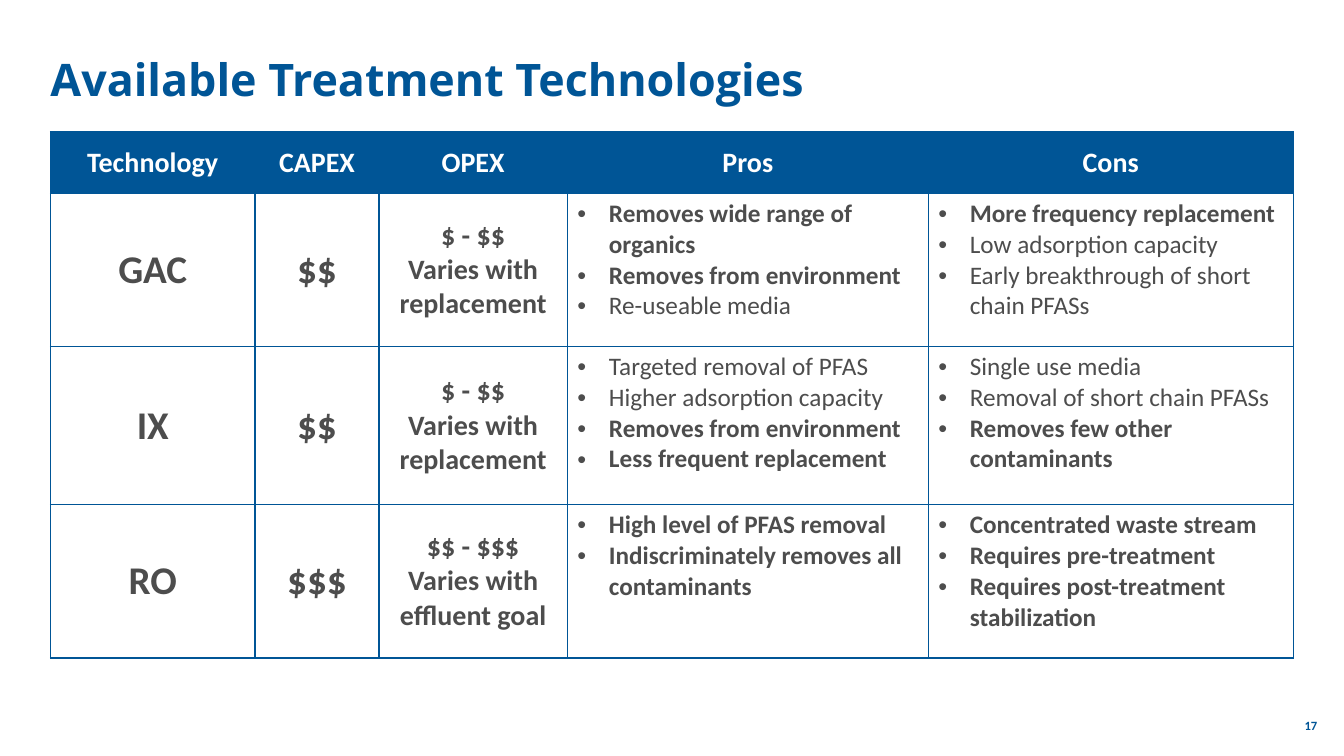
from lxml import etree
from pptx import Presentation
from pptx.dml.color import RGBColor
from pptx.enum import text
from pptx.oxml import ns
from pptx.util import Pt

BLUE, GREY, WHITE = "005596", "4D4D4D", "FFFFFF"
COL_WIDTHS = [146.2, 88.5, 134.6, 257.8, 260.7]
ROW_HEIGHTS = [43.9, 109.4, 113, 109.4]
HEADERS = ["Technology", "CAPEX", "OPEX", "Pros", "Cons"]
TECHNOLOGIES = [
    ("GAC", "$$", ["$ - $$", "Varies with", "replacement"],
     [("Removes wide range of organics", True),
      ("Removes from environment", True),
      ("Re-useable media", False)],
     [("More frequency replacement", True),
      ("Low adsorption capacity", False),
      ("Early breakthrough of short chain PFASs", False)]),
    ("IX", "$$", ["$ - $$", "Varies with", "replacement"],
     [("Targeted removal of PFAS", False),
      ("Higher adsorption capacity", False),
      ("Removes from environment", True),
      ("Less frequent replacement", True)],
     [("Single use media", False),
      ("Removal of short chain PFASs", False),
      ("Removes few other contaminants", True)]),
    ("RO", "$$$", ["$$ - $$$", "Varies with effluent goal"],
     [("High level of PFAS removal", True),
      ("Indiscriminately removes all contaminants", True)],
     [("Concentrated waste stream", True),
      ("Requires pre-treatment", True),
      ("Requires post-treatment stabilization", True)]),
]


def rgb(color):
    return RGBColor.from_string(color)


def format_runs(p, size, color, bold=True, name="Calibri"):
    for r in p.runs:
        r.font.size = Pt(size)
        r.font.name = name
        r.font.bold = bold
        r.font.color.rgb = rgb(color)


def set_margins(tf, bottom=0):
    tf.margin_left = tf.margin_top = tf.margin_right = 0
    tf.margin_bottom = Pt(bottom)


def add_title(s, title):
    sp = s.shapes.title
    sp.left, sp.top, sp.width, sp.height = Pt(36), Pt(47.5), Pt(888), Pt(90)
    tf = sp.text_frame
    tf.text = title
    tf.word_wrap = True
    tf.auto_size = text.MSO_AUTO_SIZE.NONE
    tf.vertical_anchor = text.MSO_ANCHOR.TOP
    set_margins(tf, 9.4)
    p = tf.paragraphs[0]
    p.alignment = text.PP_ALIGN.LEFT
    p.line_spacing = 0.7
    format_runs(p, 32, BLUE, name="Open Sans")


def style_cell(cell, fill):
    tcPr = cell._tc.get_or_add_tcPr()
    for side in ("lnL", "lnR", "lnT", "lnB"):
        ln = etree.SubElement(tcPr, ns.qn(f"a:{side}"), w=str(Pt(1)))
        solid = etree.SubElement(ln, ns.qn("a:solidFill"))
        etree.SubElement(solid, ns.qn("a:srgbClr"), val=BLUE)
    cell.fill.solid()
    cell.fill.fore_color.rgb = rgb(fill)


def fill_centred(cell, lines, size, color=GREY, fill=WHITE):
    style_cell(cell, fill)
    cell.vertical_anchor = text.MSO_ANCHOR.MIDDLE
    cell.text_frame.text = "\n".join(lines)
    for p in cell.text_frame.paragraphs:
        p.alignment = text.PP_ALIGN.CENTER
        format_runs(p, size, color)


def fill_bullets(cell, items):
    style_cell(cell, WHITE)
    tf = cell.text_frame
    tf.text = "\n".join(item for item, _ in items)
    for p, (_, bold) in zip(tf.paragraphs, items):
        pPr = p._p.get_or_add_pPr()
        pPr.set("marL", str(Pt(22.5)))
        pPr.set("indent", str(-Pt(22.5)))
        etree.SubElement(pPr, ns.qn("a:buFont"), typeface="Arial")
        etree.SubElement(pPr, ns.qn("a:buChar"), char="•")
        format_runs(p, 18, GREY, bold)


def add_technology_table(s):
    tbl = s.shapes.add_table(len(ROW_HEIGHTS), len(COL_WIDTHS), Pt(36), Pt(94.3),
                             Pt(sum(COL_WIDTHS)), Pt(sum(ROW_HEIGHTS))).table
    for col, width in zip(tbl.columns, COL_WIDTHS):
        col.width = Pt(width)
    for row, height in zip(tbl.rows, ROW_HEIGHTS):
        row.height = Pt(height)
    for c, header in enumerate(HEADERS):
        fill_centred(tbl.cell(0, c), [header], 20, WHITE, BLUE)
    for i, (name, capex, opex, pros, cons) in enumerate(TECHNOLOGIES, 1):
        fill_centred(tbl.cell(i, 0), [name], 28)
        fill_centred(tbl.cell(i, 1), [capex], 28)
        fill_centred(tbl.cell(i, 2), opex, 20)
        fill_bullets(tbl.cell(i, 3), pros)
        fill_bullets(tbl.cell(i, 4), cons)


def add_page_number(s, number):
    tf = s.shapes.add_textbox(Pt(930.2), Pt(512.6), Pt(10.8), Pt(10.8)).text_frame
    tf.text = number
    tf.word_wrap = False
    tf.auto_size = text.MSO_AUTO_SIZE.SHAPE_TO_FIT_TEXT
    tf.vertical_anchor = text.MSO_ANCHOR.MIDDLE
    set_margins(tf)
    p = tf.paragraphs[0]
    p.alignment = text.PP_ALIGN.RIGHT
    format_runs(p, 9, BLUE)


def main():
    prs = Presentation()
    prs.slide_width, prs.slide_height = Pt(960), Pt(540)
    s = prs.slides.add_slide(prs.slide_layouts[5])
    add_title(s, "Available Treatment Technologies")
    add_technology_table(s)
    add_page_number(s, "17")
    prs.save("out.pptx")


if __name__ == "__main__":
    main()
